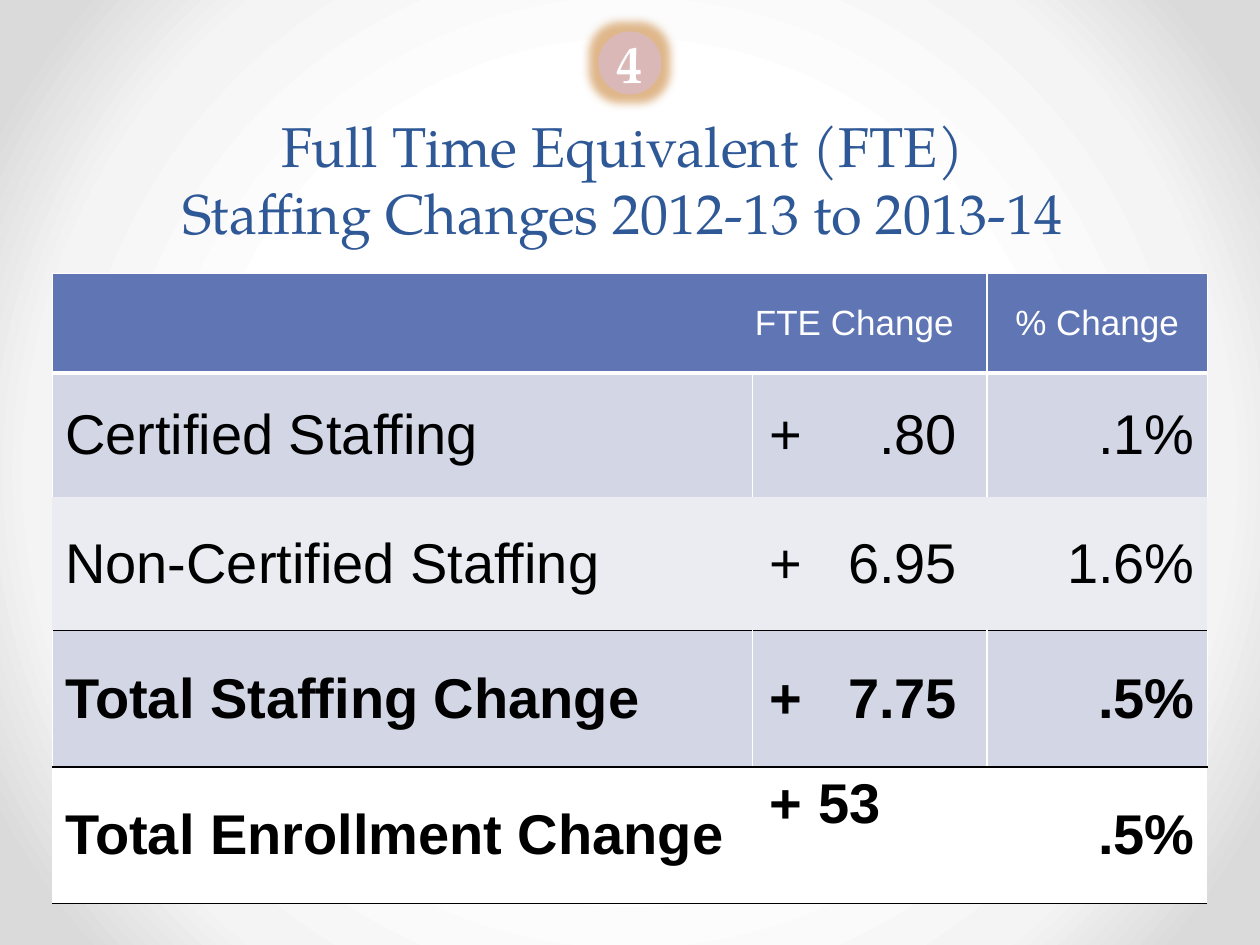
from lxml import etree
from pptx import Presentation
from pptx.dml.color import RGBColor
from pptx.enum.shapes import MSO_SHAPE
from pptx.enum.text import MSO_ANCHOR, PP_ALIGN
from pptx.oxml import parse_xml
from pptx.oxml.ns import nsdecls, qn
from pptx.util import Pt

LEFT, CENTER, RIGHT = PP_ALIGN.LEFT, PP_ALIGN.CENTER, PP_ALIGN.RIGHT
TOP, MIDDLE, BOTTOM = MSO_ANCHOR.TOP, MSO_ANCHOR.MIDDLE, MSO_ANCHOR.BOTTOM
OVAL = MSO_SHAPE.OVAL

COLORS = {
    "white": "FFFFFF", "black": "000000", "title": "2F5897",
    "header": "6076B4", "band": "D2D6E5", "light": "EAECF2",
    "badge": "DAB8B8", "glow": "E0B88C",
    "pale": "F4F4F4", "grey": "DADADA",
}
SERIF, SANS = "TeX Gyre Pagella", "Arial"


def rgb(name):
    return RGBColor.from_string(COLORS[name])


class Deck:
    """Holds the style and the current slide."""

    def __init__(self, prs):
        self.s = prs.slides.add_slide(prs.slide_layouts[5])

    def background(self, stops):
        gs = "".join(f'<a:gs pos="{pos * 1000}"><a:srgbClr val="{COLORS[c]}"/></a:gs>'
                     for pos, c in stops)
        bg = parse_xml(
            f'<p:bg {nsdecls("p", "a")}><p:bgPr><a:gradFill rotWithShape="1">'
            f'<a:gsLst>{gs}</a:gsLst><a:path path="circle">'
            '<a:fillToRect l="50000" t="50000" r="50000" b="50000"/></a:path>'
            '</a:gradFill><a:effectLst/></p:bgPr></p:bg>')
        self.s.element.cSld.insert(0, bg)

    def run(self, p, text, size, font, color, bold=False):
        r = p.add_run()
        r.text = text
        r.font.size, r.font.name, r.font.bold = Pt(size), font, bold
        r.font.color.rgb = rgb(color)

    def title(self, lines, x, y, w, h):
        sp = self.s.shapes.title
        sp.left, sp.top, sp.width, sp.height = Pt(x), Pt(y), Pt(w), Pt(h)
        tf = sp.text_frame
        tf.word_wrap, tf.vertical_anchor = True, BOTTOM
        p = tf.paragraphs[0]
        p.alignment = CENTER
        for i, line in enumerate(lines):
            if i:
                p.add_line_break()
            self.run(p, line, 32, SERIF, "title")

    def badge(self, text, x, y, size):
        sp = self.s.shapes.add_shape(OVAL, Pt(x), Pt(y), Pt(size), Pt(size))
        sp.shadow.inherit = False
        sp.fill.solid()
        sp.fill.fore_color.rgb = rgb("badge")
        sp.line.fill.background()
        # Soft glow around the badge
        effects = sp._element.spPr.find(qn("a:effectLst"))
        glow = etree.SubElement(effects, qn("a:glow"), rad=str(Pt(10)))
        etree.SubElement(glow, qn("a:srgbClr"), val=COLORS["glow"])
        tf = sp.text_frame
        tf.word_wrap, tf.vertical_anchor = False, MIDDLE
        tf.margin_left = tf.margin_right = tf.margin_top = tf.margin_bottom = 0
        p = tf.paragraphs[0]
        p.alignment = CENTER
        self.run(p, text, 30, SERIF, "white", True)

    def table(self, x, y, cols, rows):
        tbl = self.s.shapes.add_table(len(rows), len(cols), Pt(x), Pt(y),
                                      Pt(sum(cols)), Pt(sum(rows))).table
        tbl.first_row = tbl.horz_banding = False
        for col, width in zip(tbl.columns, cols):
            col.width = Pt(width)
        for row, height in zip(tbl.rows, rows):
            row.height = Pt(height)
        return tbl

    def cell(self, cell, text, fill, edges, align, size=32, color="black",
             bold=False, anchor=MIDDLE, left=7.2, right=7.2, tab=None):
        cell.vertical_anchor = anchor
        cell.margin_left, cell.margin_right = Pt(left), Pt(right)
        p = cell.text_frame.paragraphs[0]
        p.alignment = align
        if text:
            self.run(p, text, size, SANS, color, bold)
        if tab:
            tabs = etree.SubElement(p._p.get_or_add_pPr(), qn("a:tabLst"))
            etree.SubElement(tabs, qn("a:tab"), pos=str(Pt(tab)), algn="r")
        # Borders come before the fill in the cell properties
        tcPr = cell._tc.get_or_add_tcPr()
        for side in "LRTB":
            edge = edges.get(side)
            ln = etree.SubElement(tcPr, qn(f"a:ln{side}"))
            if edge:
                ln.set("w", str(Pt(edge[1])))
                paint = etree.SubElement(ln, qn("a:solidFill"))
                etree.SubElement(paint, qn("a:srgbClr"), val=COLORS[edge[0]])
            else:
                etree.SubElement(ln, qn("a:noFill"))
        cell.fill.solid()
        cell.fill.fore_color.rgb = rgb(fill)


def main():
    prs = Presentation()
    prs.slide_width, prs.slide_height = Pt(720), Pt(540)
    deck = Deck(prs)
    deck.background([(50, "white"), (76, "pale"), (92, "grey")])
    deck.title(["Full Time Equivalent (FTE) ", "Staffing Changes 2012-13 to 2013-14 "],
               36, 54, 648, 90)

    # Staffing table
    tbl = deck.table(30, 156.24, [400, 134, 126], [57, 71, 76, 78, 78])
    white, thick, black = ("white", 1), ("white", 3), ("black", 1)
    sides = {"L": white, "R": white}

    # Header row
    tbl.cell(0, 0).merge(tbl.cell(0, 1))
    header = {**sides, "T": white, "B": thick}
    for c, text, align, right in [(0, "FTE Change", RIGHT, 19),
                                  (1, "", RIGHT, 19),
                                  (2, "% Change", CENTER, 7.2)]:
        deck.cell(tbl.cell(0, c), text, "header", header, align, 20, "white", right=right)

    # Body rows: label, change, percent, fill, bold, borders
    body = [
        ("Certified Staffing", "+\t.80", ".1%", "band", False, {**sides, "T": thick}),
        ("Non-Certified Staffing", "+\t6.95", "1.6%", "light", False, {"B": black}),
        ("Total Staffing Change", "+\t7.75", ".5%", "band", True,
         {**sides, "T": black, "B": black}),
        ("Total Enrollment Change", "+ 53", ".5%", "white", True,
         {"T": black, "B": black}),
    ]
    for i, (label, change, percent, fill, bold, edges) in enumerate(body, 1):
        tabbed = "\t" in change
        deck.cell(tbl.cell(i, 0), label, fill, edges, LEFT, bold=bold)
        deck.cell(tbl.cell(i, 1), change, fill, edges, LEFT, bold=bold, left=10,
                  anchor=MIDDLE if tabbed else TOP, tab=107 if tabbed else None)
        deck.cell(tbl.cell(i, 2), percent, fill, edges, RIGHT, bold=bold)

    # Slide number badge
    deck.badge("4", 342, 18, 36)
    prs.save("out.pptx")


if __name__ == "__main__":
    main()
